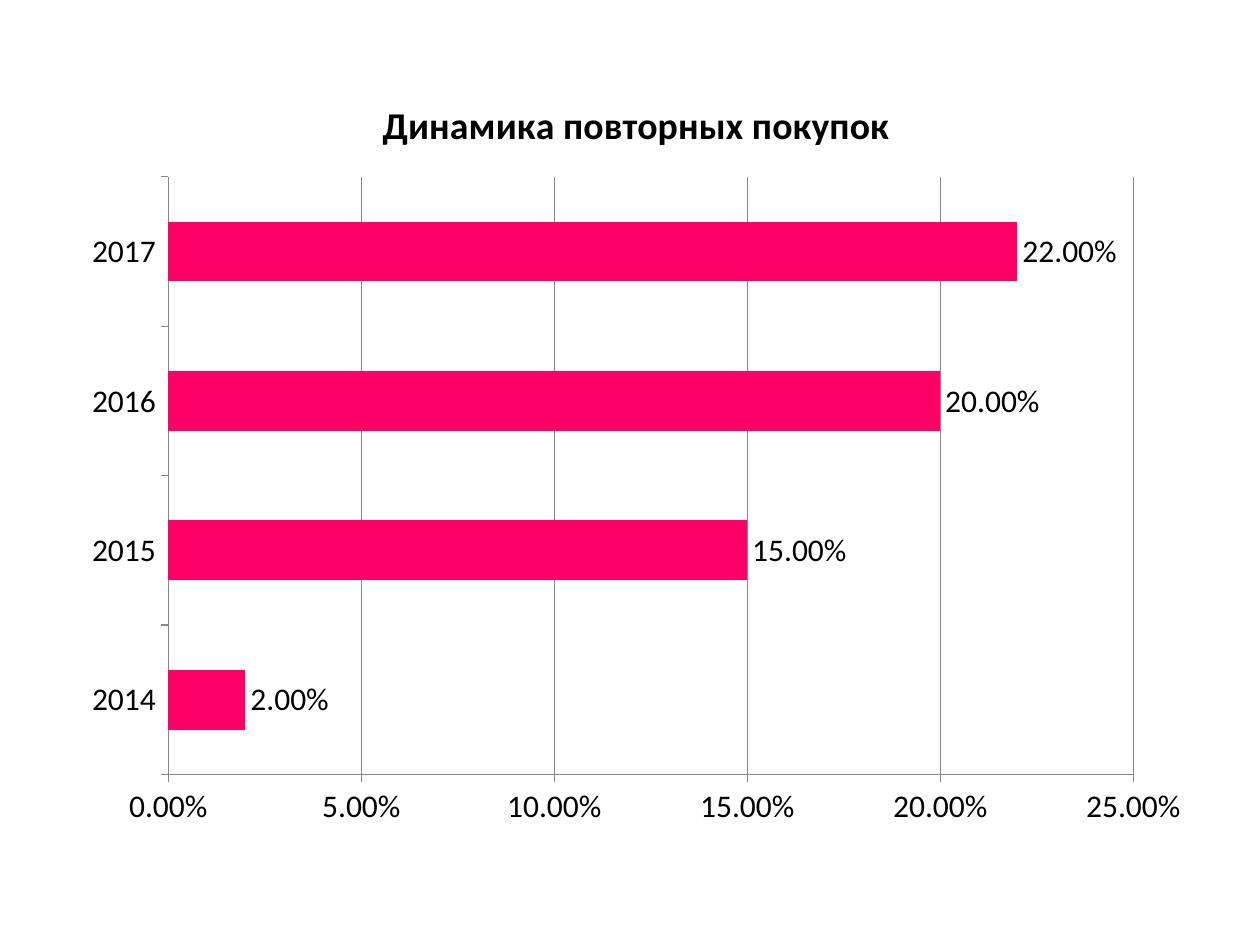
from pptx import Presentation
from pptx.chart.data import CategoryChartData
from pptx.dml.color import RGBColor
from pptx.enum.chart import XL_CHART_TYPE as ChartType
from pptx.enum.chart import XL_LABEL_POSITION as LabelPosition
from pptx.enum.chart import XL_TICK_MARK as TickMark
from pptx.util import Inches, Pt

TITLE = "Динамика повторных покупок"
REPEAT_SHARE = {"2014": 0.02, "2015": 0.15, "2016": 0.20, "2017": 0.22}
PERCENT = "0.00%"
FONT = "Calibri"
PINK = RGBColor(0xFF, 0x00, 0x66)
BLACK = RGBColor(0x00, 0x00, 0x00)
GRAY = RGBColor(0x86, 0x86, 0x86)


def format_font(font, size=18, bold=False):
    font.name = FONT
    font.size = Pt(size)
    font.bold = bold
    font.color.rgb = BLACK


def write_text(frame, text, **style):
    span = frame.paragraphs[0].add_run()
    span.text = text
    format_font(span.font, **style)


def format_line(line):
    line.color.rgb = GRAY
    line.width = Pt(0.75)


def add_purchase_chart(page):
    data = CategoryChartData(number_format=PERCENT)
    data.categories = list(REPEAT_SHARE)
    data.add_series(TITLE, list(REPEAT_SHARE.values()))
    chart = page.shapes.add_chart(
        ChartType.BAR_CLUSTERED,
        Inches(0.55), Inches(0.55), Inches(9), Inches(6.12), data,
    ).chart
    format_font(chart.font)
    chart.has_legend = False
    chart.has_title = True
    write_text(chart.chart_title.text_frame, TITLE, size=21.6, bold=True)
    chart.chart_title.include_in_layout = False

    for axis in (chart.category_axis, chart.value_axis):
        axis.major_tick_mark = TickMark.OUTSIDE
        axis.minor_tick_mark = TickMark.NONE
        format_line(axis.format.line)
    chart.category_axis.has_major_gridlines = False

    values = chart.value_axis
    values.minimum_scale, values.maximum_scale, values.major_unit = 0, 0.25, 0.05
    values.tick_labels.number_format = PERCENT
    values.tick_labels.number_format_is_linked = False
    values.has_major_gridlines = True
    format_line(values.major_gridlines.format.line)

    plot = chart.plots[0]
    plot.gap_width = 150
    plot.vary_by_categories = False
    bars = plot.series[0]
    bars.invert_if_negative = False
    bars.format.fill.solid()
    bars.format.fill.fore_color.rgb = PINK

    labels = bars.data_labels
    labels.show_value = True
    labels.number_format = PERCENT
    labels.number_format_is_linked = False
    labels.position = LabelPosition.OUTSIDE_END
    format_font(labels.font)


def main():
    deck = Presentation()
    deck.slide_width, deck.slide_height = Inches(10), Inches(7.5)
    page = deck.slides.add_slide(deck.slide_layouts[6])
    add_purchase_chart(page)
    deck.save("out.pptx")


if __name__ == "__main__":
    main()
